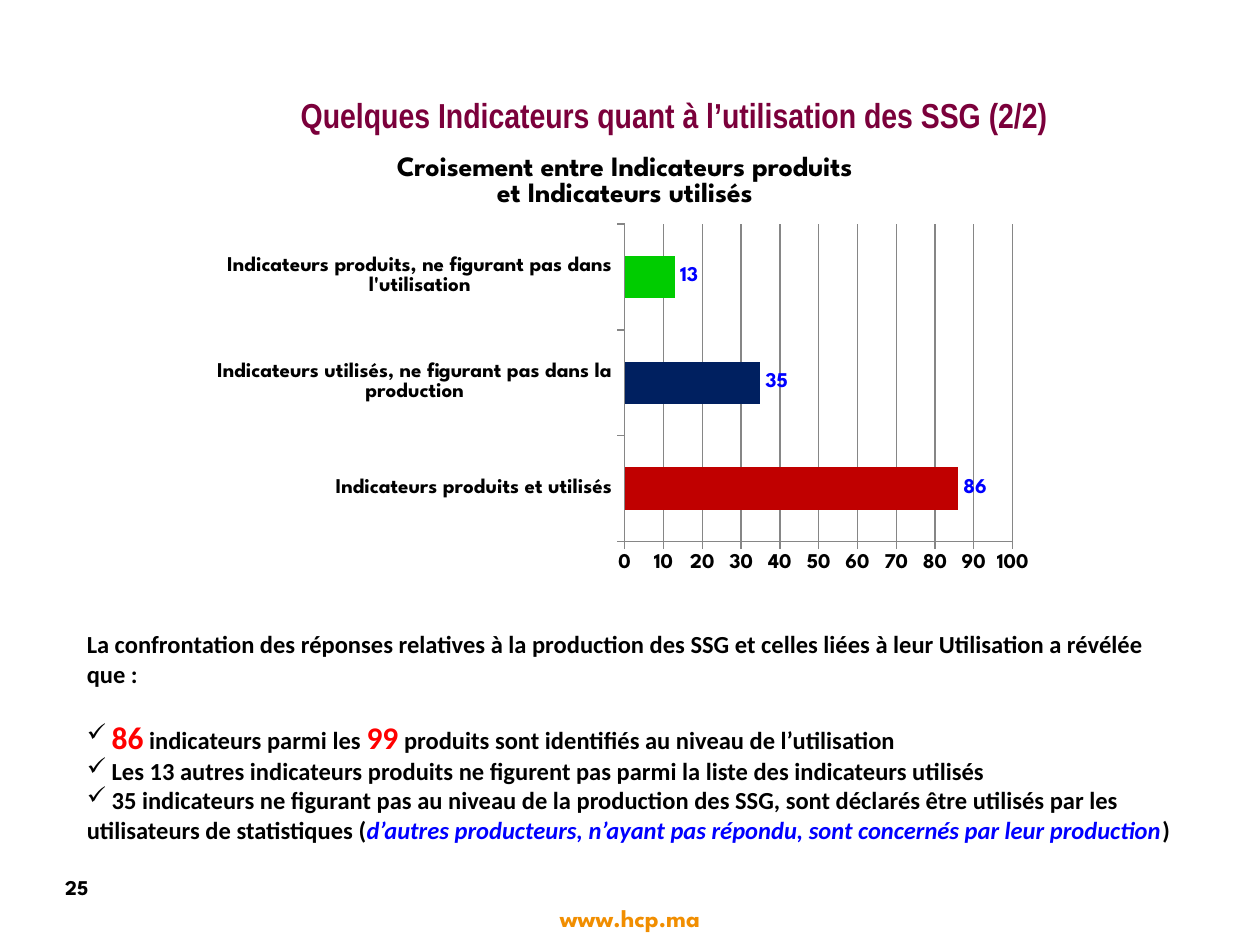
from dataclasses import dataclass

from lxml.etree import SubElement
from pptx import Presentation
from pptx.chart.data import CategoryChartData
from pptx.dml.color import RGBColor
from pptx.enum.chart import XL_CHART_TYPE as ChartType
from pptx.enum.chart import XL_LABEL_POSITION as LabelPos
from pptx.enum.chart import XL_TICK_MARK as Tick
from pptx.enum.shapes import MSO_SHAPE as Preset
from pptx.enum.text import MSO_ANCHOR as Anchor
from pptx.enum.text import PP_ALIGN as Align
from pptx.oxml.ns import qn
from pptx.util import Pt

COLORS = {
    "plum": "7B003B", "orange": "F18E00", "black": "000000", "red": "FF0000",
    "blue": "0000FF", "crimson": "C00000", "navy": "002060",
    "green": "00CC00", "gray": "868686",
}
DISPLAY, BODY, HEADING = "League Spartan", "Calibri", "Arial Narrow"


@dataclass
class Span:
    text: str
    size: float = 14
    color: str = "black"
    font: str = BODY
    italic: bool = False


@dataclass
class Line:
    spans: list[Span]
    align: Align = Align.LEFT
    before: float = 0
    check: bool = False


@dataclass
class Bar:
    category: str
    value: int
    color: str


def rgb(name: str) -> RGBColor:
    return RGBColor.from_string(COLORS[name])


def style(font, size: float, color: str = "black", name: str = DISPLAY) -> None:
    font.name, font.size, font.bold = name, Pt(size), True
    font.color.rgb = rgb(color)


def write(frame, lines: list[Line], anchor: Anchor = Anchor.MIDDLE) -> None:
    frame.word_wrap = True
    frame.vertical_anchor = anchor
    for index, line in enumerate(lines):
        paragraph = frame.paragraphs[0] if index == 0 else frame.add_paragraph()
        paragraph.alignment = line.align
        if line.before:
            paragraph.space_before = Pt(line.before)
        if line.check:
            props = paragraph._p.get_or_add_pPr()
            props.set("marL", "0")
            props.set("indent", "0")
            SubElement(props, qn("a:buChar")).set("char", "✓")
        for span in line.spans:
            run = paragraph.add_run()
            run.text = span.text
            style(run.font, span.size, span.color, span.font)
            run.font.italic = span.italic


def add_text(slide, left: float, top: float, width: float, height: float,
             lines: list[Line], anchor: Anchor = Anchor.MIDDLE) -> None:
    box = slide.shapes.add_textbox(Pt(left), Pt(top), Pt(width), Pt(height))
    write(box.text_frame, lines, anchor)


def add_page_number(slide, number: str) -> None:
    badge = slide.shapes.add_shape(Preset.OVAL, Pt(11.5), Pt(489), Pt(54), Pt(36))
    badge.shadow.inherit = False
    badge.fill.background()
    badge.line.fill.background()
    write(badge.text_frame, [Line([Span(number, 12, font=DISPLAY)], Align.RIGHT)])


def place_plot(chart, **fractions: float) -> None:
    """Fix the inner plot area as fractions of the chart."""
    plot_area = chart._chartSpace.chart.plotArea
    layout = plot_area.find(qn("c:layout"))
    if layout is None:
        layout = SubElement(plot_area, qn("c:layout"))
        plot_area.insert(0, layout)
    manual = SubElement(layout, qn("c:manualLayout"))
    settings = {"layoutTarget": "inner", "xMode": "edge", "yMode": "edge", **fractions}
    for tag, value in settings.items():
        SubElement(manual, qn(f"c:{tag}")).set("val", str(value))


def add_bar_chart(slide, title: str, bars: list[Bar]) -> None:
    data = CategoryChartData()
    data.categories = [bar.category for bar in bars]
    data.add_series("Series 1", [bar.value for bar in bars])
    chart = slide.shapes.add_chart(
        ChartType.BAR_CLUSTERED, Pt(116), Pt(77), Pt(482), Pt(255.5), data).chart
    chart.has_legend = False
    style(chart.font, 10)

    # Title
    chart.has_title = True
    chart.chart_title.text_frame.text = title
    for paragraph in chart.chart_title.text_frame.paragraphs:
        for run in paragraph.runs:
            style(run.font, 16)
    place_plot(chart, x=0.5, y=0.2, w=0.46, h=0.71)

    # Axes
    for axis in (chart.category_axis, chart.value_axis):
        style(axis.tick_labels.font, 12)
        axis.major_tick_mark = Tick.OUTSIDE
        axis.format.line.color.rgb = rgb("gray")
    values = chart.value_axis
    values.minimum_scale, values.maximum_scale, values.major_unit = 0, 100, 10
    values.major_gridlines.format.line.color.rgb = rgb("gray")

    # Bars and their labels
    plot = chart.plots[0]
    plot.gap_width = 150
    plot.vary_by_categories = False
    for index, bar in enumerate(bars):
        fill = plot.series[0].points[index].format.fill
        fill.solid()
        fill.fore_color.rgb = rgb(bar.color)
    labels = plot.series[0].data_labels
    labels.show_value = True
    labels.position = LabelPos.OUTSIDE_END
    style(labels.font, 12, "blue")


BARS = [
    Bar("Indicateurs produits et utilisés", 86, "crimson"),
    Bar("Indicateurs utilisés, ne figurant pas dans la production", 35, "navy"),
    Bar("Indicateurs produits, ne figurant pas dans l'utilisation", 13, "green"),
]
FINDINGS = [
    Line([Span("La confrontation des réponses relatives à la production des SSG et "
               "celles liées à leur Utilisation a révélée que\u00a0:")]),
    Line([Span(" "), Span("86", 18, "red"), Span(" indicateurs parmi les "),
          Span("99", 18, "red"),
          Span(" produits sont identifiés au niveau de l’utilisation")],
         before=17, check=True),
    Line([Span(" Les 13 autres indicateurs produits ne figurent pas parmi la liste "
               "des indicateurs utilisés")], check=True),
    Line([Span(" 35 indicateurs ne figurant pas au niveau de la production des SSG, "
               "sont déclarés être utilisés par les utilisateurs de statistiques ("),
          Span("d’autres producteurs, n’ayant pas répondu, sont concernés par leur "
               "production", color="blue", italic=True),
          Span(")")], check=True),
]


def main() -> None:
    deck = Presentation()
    deck.slide_width, deck.slide_height = Pt(720), Pt(540)
    slide = deck.slides.add_slide(deck.slide_layouts[6])

    # Footer address
    add_text(slide, 275, 512.5, 170, 24,
             [Line([Span("www.hcp.ma", 14, "orange", DISPLAY)], Align.CENTER)], Anchor.TOP)
    # Heading
    add_text(slide, 50.5, 49, 669.5, 33,
             [Line([Span("Quelques Indicateurs quant à l’utilisation des SSG (2/2)",
                         19.8, "plum", HEADING)], Align.CENTER)])
    add_page_number(slide, "25")
    add_bar_chart(slide, "Croisement entre Indicateurs produits\net Indicateurs utilisés",
                  BARS)
    # Findings
    add_text(slide, 42.5, 355.5, 646.5, 131, FINDINGS)

    deck.save("out.pptx")


if __name__ == "__main__":
    main()
